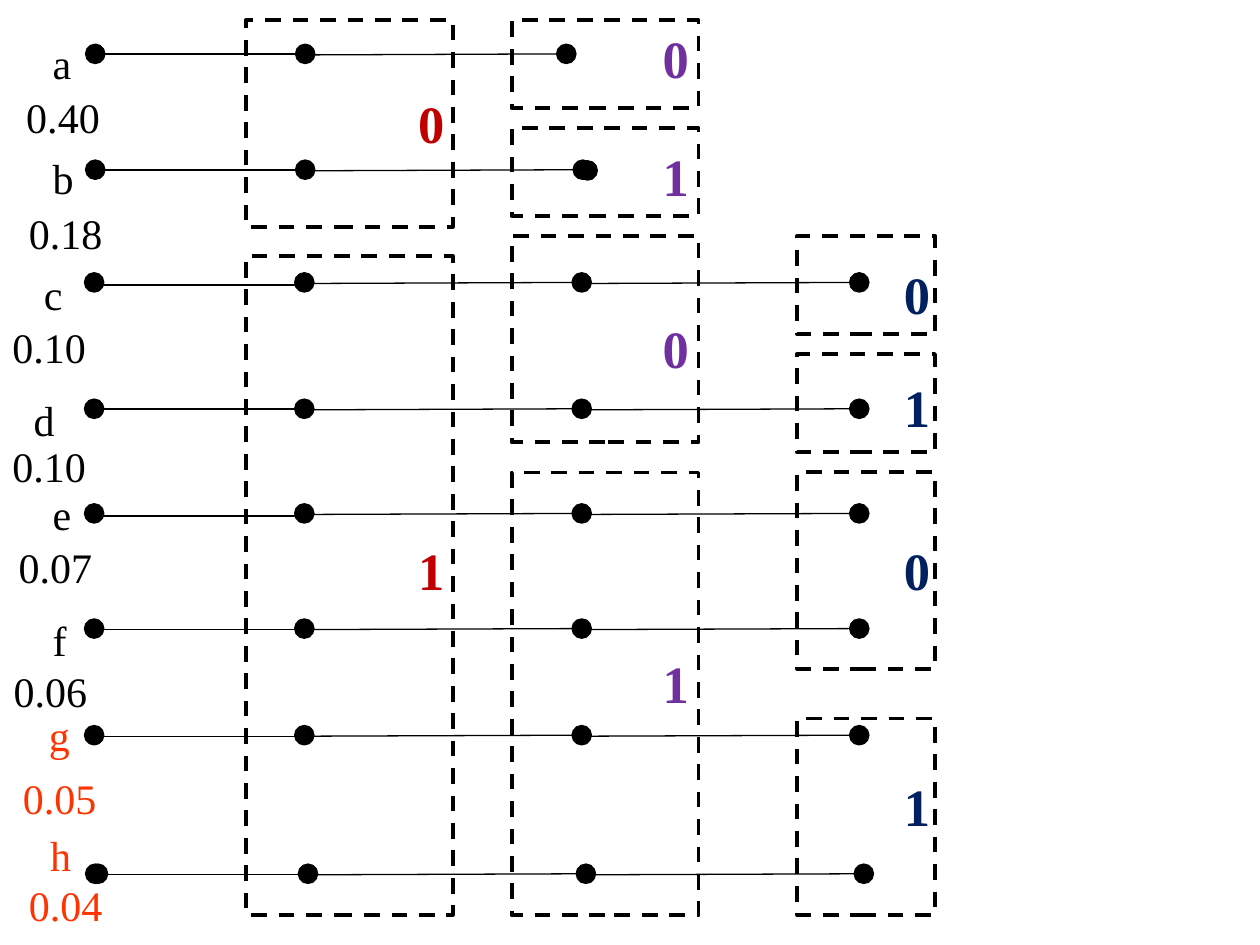
import pptx
import pptx.util
import pptx.dml.color
import pptx.enum.dml
import pptx.enum.shapes
import pptx.enum.text
from pptx.oxml.ns import qn
from lxml import etree

Pt = pptx.util.Pt
COLORS = {
    "ink": "000000",
    "last_pair": "FF3300",
    "first_bit": "C00000",
    "second_bit": "7030A0",
    "third_bit": "002060",
}
FONT = "Times New Roman"
DOT = 10.8

# name, its left and top, probability, its left and top, colour
SYMBOLS = [
    ("a", 23, 18, "0.40", 7.9, 49, "ink"),
    ("b", 23, 83.5, "0.18", 9.4, 115.2, "ink"),
    ("c", 18, 149.8, "0.10", 0, 180, "ink"),
    ("d", 12.2, 221.8, "0.10", 0, 248.4, "ink"),
    ("e", 23, 275.8, "0.07", 3.6, 306, "ink"),
    ("f", 23, 347.8, "0.06", 0.7, 376.6, "ink"),
    ("g", 20.9, 401.8, "0.05", 6, 437.8, "last_pair"),
    ("h", 21.6, 470.2, "0.04", 9.4, 499, "last_pair"),
]
# dot lefts in a row, dot top, drop of the first line below the dot centre
COLUMNS = (48.4, 168.5, 327, 485.6)
ROWS = [
    ((49, 169, 318.2), 25.4, 0),
    ((49, 169, 327.6), 91.6, 0),
    (COLUMNS, 156, 1.4),
    (COLUMNS, 228.2, 0),
    (COLUMNS, 288, 1.4),
    (COLUMNS, 353.8, 0.6),
    (COLUMNS, 414.7, 0.8),
    ((49, 170.6, 329.4, 488.2), 493.9, 0.4),
]
SECOND_DOTS = [(330.4, 92), (50.6, 493.9)]

# colour, box left, box width, digit left, groups of (top, height, digit, digit top)
STAGES = [
    ("first_bit", 140.6, 118.1, 231.8,
     [(11.5, 118.1, "0", 48.2), (146.2, 376.6, "1", 303.8)]),
    ("second_bit", 292.4, 106.8, 371.5,
     [(11.5, 50.4, "0", 11.5), (73.2, 50.4, "1", 78.5),
      (134.8, 118.1, "0", 177.1), (270, 253.1, "1", 368.6)]),
    ("third_bit", 455.6, 78.7, 509.4,
     [(134.8, 56.2, "0", 146.2), (202.3, 56.2, "1", 211),
      (270, 112.3, "0", 303.8), (410.6, 112.3, "1", 438.5)]),
]


def rgb(name):
    return pptx.dml.color.RGBColor.from_string(COLORS[name])


def add_label(slide, left, top, width, height, text, size, color, bold=False):
    label = slide.shapes.add_textbox(Pt(left), Pt(top), Pt(width), Pt(height))
    frame = label.text_frame
    frame.word_wrap = False
    frame.auto_size = pptx.enum.text.MSO_AUTO_SIZE.SHAPE_TO_FIT_TEXT
    run = frame.paragraphs[0].add_run()
    run.text = text
    run.font.name = FONT
    run.font.size = Pt(size)
    run.font.bold = bold
    run.font.color.rgb = rgb(color)


def add_outlined(slide, kind, left, top, width, height, weight):
    shape = slide.shapes.add_shape(kind, Pt(left), Pt(top), Pt(width), Pt(height))
    shape.shadow.inherit = False
    shape.line.color.rgb = rgb("ink")
    shape.line.width = Pt(weight)
    return shape


def add_dot(slide, left, top):
    dot = add_outlined(slide, pptx.enum.shapes.MSO_SHAPE.OVAL, left, top, DOT, DOT, 1)
    dot.fill.solid()
    dot.fill.fore_color.rgb = rgb("ink")


def add_line(slide, x1, y1, x2, y2, weight):
    line = slide.shapes.add_connector(
        pptx.enum.shapes.MSO_CONNECTOR.STRAIGHT, Pt(x1), Pt(y1), Pt(x2), Pt(y2))
    line.line.color.rgb = rgb("ink")
    line.line.width = Pt(weight)
    etree.SubElement(line._element.spPr, qn("a:effectLst"))


def draw_symbol(slide, name, name_left, name_top, chance, left, top, color):
    add_label(slide, name_left, name_top, 26, 36, name, 24, color)
    add_label(slide, left, top, 56.2, 36, chance, 24, color)


def draw_row(slide, lefts, top, drop):
    """Join the dots of one symbol with lines that run across the stages."""
    middle = top + DOT / 2
    for stage, (start, end) in enumerate(zip(lefts, lefts[1:])):
        start_y, end_y = (middle + drop,) * 2 if stage == 0 else (middle + 0.6, middle)
        add_line(slide, start + DOT / 2, start_y, end + DOT / 2, end_y,
                 1 if stage == 0 else 0.75)
    for left in lefts:
        add_dot(slide, left, top)


def draw_stage(slide, color, left, width, digit_left, groups):
    """Frame the symbol groups of one split and give each its code digit."""
    for top, height, digit, digit_top in groups:
        frame = add_outlined(slide, pptx.enum.shapes.MSO_SHAPE.RECTANGLE,
                             left, top, width, height, 2.25)
        frame.fill.background()
        frame.line.dash_style = pptx.enum.dml.MSO_LINE.DASH
        add_label(slide, digit_left, digit_top, 29.5, 43.9, digit, 30, color, bold=True)


def main():
    deck = pptx.Presentation()
    deck.slide_width, deck.slide_height = Pt(720), Pt(540)
    slide = deck.slides.add_slide(deck.slide_layouts[6])
    for symbol in SYMBOLS:
        draw_symbol(slide, *symbol)
    for row in ROWS:
        draw_row(slide, *row)
    for left, top in SECOND_DOTS:
        add_dot(slide, left, top)
    for stage in STAGES:
        draw_stage(slide, *stage)
    deck.save("out.pptx")


if __name__ == "__main__":
    main()
